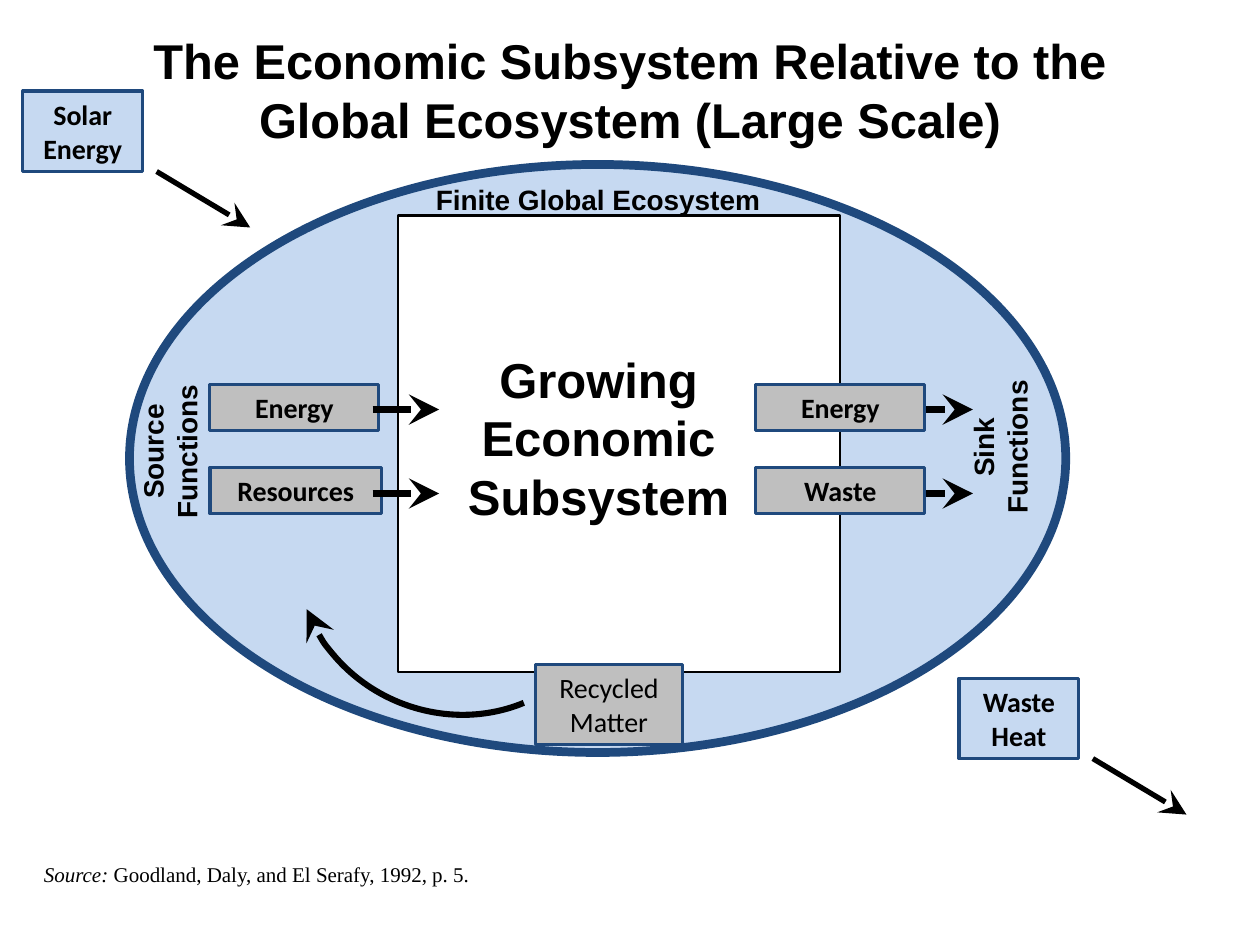
from pptx import Presentation
from pptx.dml.color import RGBColor
from pptx.enum.shapes import MSO_CONNECTOR as Connector, MSO_SHAPE as Preset
from pptx.enum.text import MSO_ANCHOR as Anchor, PP_ALIGN as Align
from pptx.oxml.ns import qn
from pptx.util import Pt
from lxml.etree import SubElement

BLACK = RGBColor(0, 0, 0)
WHITE = RGBColor(255, 255, 255)
GREY = RGBColor(0xBF, 0xBF, 0xBF)
PALE_BLUE = RGBColor(0xC6, 0xD9, 0xF1)
NAVY = RGBColor(0x1F, 0x49, 0x7D)


def points(*values):
    return [Pt(value) for value in values]


def write(shape, text, size, font_name, bold=True, align=Align.CENTER):
    text_frame = shape.text_frame
    text_frame.word_wrap = True
    text_frame.text = text
    paragraph = text_frame.paragraphs[0]
    paragraph.alignment = align
    for run in paragraph.runs:
        run.font.name = font_name
        run.font.size = Pt(size)
        run.font.bold = bold
        run.font.color.rgb = BLACK
    return paragraph


def add_outline(slide, preset, box, fill, line, width):
    shape = slide.shapes.add_shape(preset, *points(*box))
    shape.shadow.inherit = False
    if fill is None:
        shape.fill.background()
    else:
        shape.fill.solid()
        shape.fill.fore_color.rgb = fill
    shape.line.color.rgb = line
    shape.line.width = Pt(width)
    return shape


def add_box(slide, text, box, fill, bold=True):
    shape = add_outline(slide, Preset.RECTANGLE, box, fill, NAVY, 1.75)
    shape.text_frame.vertical_anchor = Anchor.MIDDLE
    write(shape, text, 16, "Calibri", bold)


def add_label(slide, text, box, size=16, align=Align.CENTER, rotation=0):
    label = slide.shapes.add_textbox(*points(*box))
    label.rotation = rotation
    write(label, text, size, "Arial", align=align)


def add_arrowhead(shape, end):
    line = shape.line._get_or_add_ln()
    SubElement(line, qn(f"a:{end}"), type="stealth", w="lg", len="lg")


def add_arrow(slide, start, end, width):
    arrow = slide.shapes.add_connector(Connector.STRAIGHT, *points(*start, *end))
    arrow.line.color.rgb = BLACK
    arrow.line.width = Pt(width)
    add_arrowhead(arrow, "tailEnd")
    SubElement(arrow._element.spPr, qn("a:effectLst"))


def add_flow_arrows(slide, left):
    for y in (234, 282):
        add_arrow(slide, (left, y), (left + 38, y), 3.5)


def add_recycling_arc(slide):
    arc = add_outline(slide, Preset.ARC, (169, 240.5, 181, 167), None, BLACK, 3.5)
    arc.adjustments[0] = 130.8
    arc.adjustments[1] = 191.51
    arc.rotation = 22
    arc._element.spPr.find(qn("a:xfrm")).set("flipV", "1")
    add_arrowhead(arc, "headEnd")


def add_title(slide):
    title = slide.shapes.title
    title.left, title.top, title.width, title.height = points(36, 15, 648, 72)
    title.text_frame.vertical_anchor = Anchor.MIDDLE
    write(title, "The Economic Subsystem Relative to the Global Ecosystem (Large Scale)",
          27.9, "Arial")


def add_source(slide):
    source = slide.shapes.add_textbox(*points(18, 489, 276, 44))
    paragraph = write(source, "Source: ", 12, "Times New Roman", False, Align.LEFT)
    paragraph.runs[0].font.italic = True
    citation = paragraph.add_run()
    citation.text = "Goodland, Daly, and El Serafy, 1992, p. 5."
    citation.font.name = "Times New Roman"
    citation.font.size = Pt(12)
    citation.font.color.rgb = BLACK


def main():
    presentation = Presentation()
    presentation.slide_width, presentation.slide_height = points(720, 540)
    slide = presentation.slides.add_slide(presentation.slide_layouts[5])
    add_title(slide)

    add_outline(slide, Preset.OVAL, (74, 94, 535, 336), PALE_BLUE, NAVY, 5)
    add_flow_arrows(slide, 518)
    add_outline(slide, Preset.RECTANGLE, (227.5, 123, 252.5, 261), WHITE, BLACK, 1.5)
    add_label(slide, "Finite Global Ecosystem", (242, 101, 224, 27), align=Align.LEFT)
    add_label(slide, "Growing Economic Subsystem", (258, 196, 168, 128), 28)

    for text, left, top in (("Solar Energy", 13, 52), ("Waste Heat", 548, 387.5)):
        add_box(slide, text, (left, top, 68.5, 46), PALE_BLUE)
        add_arrow(slide, (left + 76.5, top + 46), (left + 130, top + 78), 3)

    add_box(slide, "Recycled Matter", (306, 379.5, 84, 46), GREY, bold=False)
    flows = (("Energy", 432, 219.5, 96.5), ("Waste", 432, 267, 96.5),
             ("Energy", 120, 219.5, 96.5), ("Resources", 120, 267, 98))
    for text, left, top, width in flows:
        add_box(slide, text, (left, top, width, 26.5), GREY)

    add_label(slide, "Source Functions", (49, 235, 96, 46), rotation=270)
    add_label(slide, "Sink Functions", (523.5, 232.5, 96, 46), rotation=270)
    add_flow_arrows(slide, 213)
    add_recycling_arc(slide)
    add_source(slide)
    presentation.save("out.pptx")


if __name__ == "__main__":
    main()
